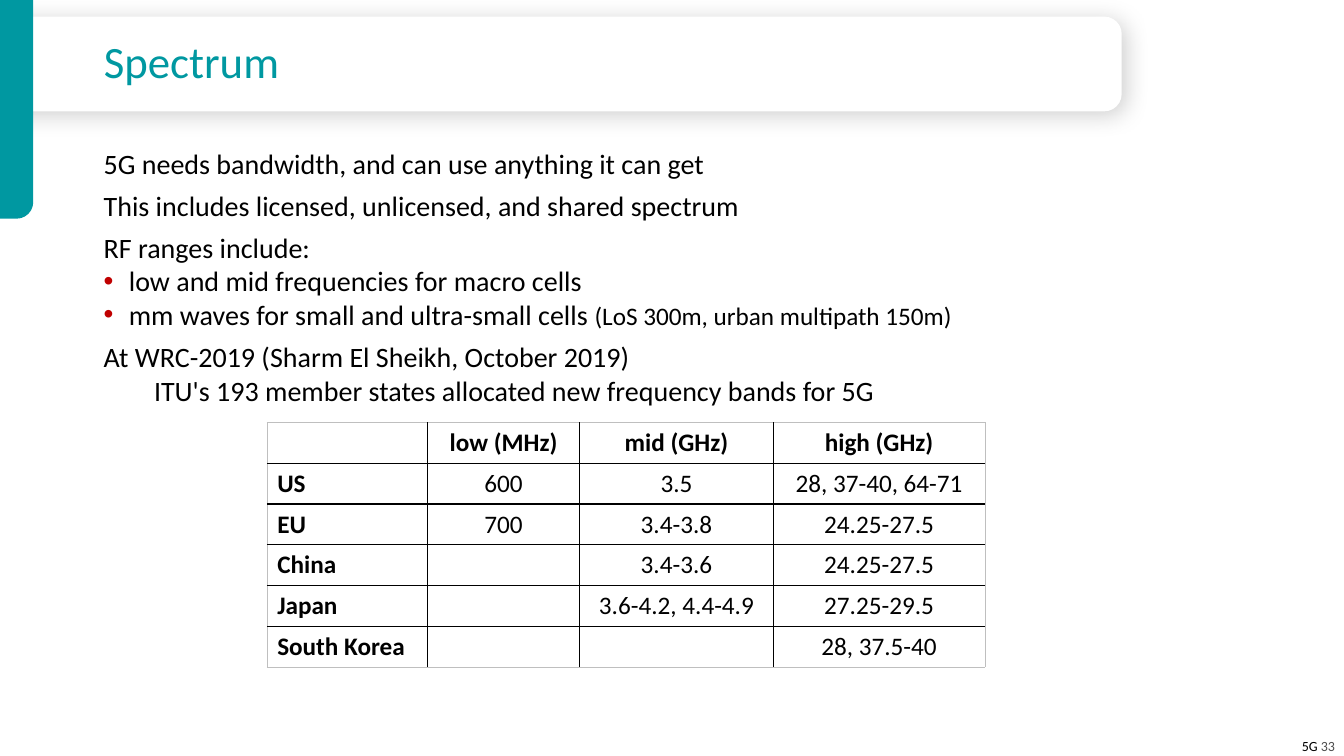
from lxml import etree
from pptx import Presentation
from pptx.dml.color import RGBColor
from pptx.enum.shapes import MSO_SHAPE
from pptx.enum.text import MSO_ANCHOR, PP_ALIGN
from pptx.oxml import parse_xml
from pptx.oxml.ns import nsdecls, qn
from pptx.util import Inches, Pt

COLORS = {
    "white": "FFFFFF", "black": "000000", "teal": "0098A1",
    "red": "C00000", "gray": "4D4D4D", "outline": "BFBFBF",
}


def rgb(name):
    return RGBColor.from_string(COLORS[name])


def set_font(font, size, color="black", bold=False):
    font.name = "Calibri"
    font.size = Pt(size)
    font.bold = bold
    font.color.rgb = rgb(color)


prs = Presentation()
prs.slide_width, prs.slide_height = Inches(13.33), Inches(7.5)
slide = prs.slides.add_slide(prs.slide_layouts[5])
shapes = slide.shapes

# Footer with page number
footer = shapes.add_textbox(Inches(12.78), Inches(7.27), Inches(0.56), Inches(0.27))
footer.text_frame.word_wrap = False
page = footer.text_frame.paragraphs[0]
page.alignment = PP_ALIGN.RIGHT
for text, color in (("5G ", "black"), ("33", "gray")):
    run = page.add_run()
    run.text = text
    set_font(run.font, 10, color)

# Header card, turned so that its rounded end points right
header = shapes.add_shape(MSO_SHAPE.ROUND_2_SAME_RECTANGLE,
                          Inches(5.09), Inches(-4.93), Inches(0.94), Inches(11.13))
header.rotation = 90
header.adjustments[0] = 0.184
header.adjustments[1] = 0

# Side tab, rounded at the bottom right
side_tab = shapes.add_shape(MSO_SHAPE.ROUND_1_RECTANGLE,
                            0, 0, Inches(0.33), Inches(2.17))
side_tab.adjustments[0] = 0.5
side_tab._element.spPr.find(qn("a:xfrm")).set("flipV", "1")

for panel, color in ((header, "white"), (side_tab, "teal")):
    panel.shadow.inherit = False
    panel.fill.solid()
    panel.fill.fore_color.rgb = rgb(color)
    panel.line.fill.background()

header._element.spPr.find(qn("a:effectLst")).append(parse_xml(
    f'<a:outerShdw {nsdecls("a")} blurRad="{Pt(17)}" dist="{Pt(3)}" dir="2700000" '
    f'algn="tl" rotWithShape="0"><a:srgbClr val="{COLORS["black"]}">'
    '<a:alpha val="19000"/></a:srgbClr></a:outerShdw>'))

# Title
title = shapes.title
shapes._spTree.append(title._element)
title.left, title.top = Inches(0.93), Inches(0.29)
title.width, title.height = Inches(9.87), Inches(0.71)
title.text_frame.text = "Spectrum"
title.text_frame.vertical_anchor = MSO_ANCHOR.MIDDLE
heading = title.text_frame.paragraphs[0]
heading.alignment = PP_ALIGN.LEFT
heading.line_spacing = 0.85
set_font(heading.font, 32, "teal")

# Body: kind of paragraph, then its text
points = [
    ("lead", "5G needs bandwidth, and can use anything it can get"),
    ("lead", "This includes licensed, unlicensed, and shared spectrum"),
    ("lead", "RF ranges include:"),
    ("bullet", "low and mid frequencies for macro cells"),
    ("bullet", "mm waves for small and ultra-small cells "),
    ("lead", "At WRC-2019 (Sharm El Sheikh, October 2019)"),
    ("indented", "ITU's 193 member states allocated new frequency bands for 5G"),
]
body = shapes.add_textbox(Inches(0.93), Inches(1.4), Inches(11.96), Inches(5.58)).text_frame
body.word_wrap = True
for i, (kind, text) in enumerate(points):
    point = body.add_paragraph() if i else body.paragraphs[0]
    point.add_run().text = text
    props = point._p.get_or_add_pPr()
    if kind == "lead" and i:
        point.space_before = Pt(6)
    elif kind == "indented":
        props.set("marL", str(Inches(0.5)))
    elif kind == "bullet":
        props.set("marL", str(Inches(0.25)))
        props.set("indent", str(Inches(-0.25)))
        bullet_color = etree.SubElement(props, qn("a:buClr"))
        etree.SubElement(bullet_color, qn("a:srgbClr"), val=COLORS["red"])
        etree.SubElement(props, qn("a:buFont"), typeface="Arial")
        etree.SubElement(props, qn("a:buChar"), char="•")
    set_font(point.font, 20)
ranges = body.paragraphs[4].add_run()
ranges.text = "(LoS 300m, urban multipath 150m)"
ranges.font.size = Pt(18)

# Frequency bands by region
bands = [
    ["", "low (MHz)", "mid (GHz)", "high (GHz)"],
    ["US", "600", "3.5", "28, 37-40, 64-71"],
    ["EU", "700", "3.4-3.8", "24.25-27.5"],
    ["China", "", "3.4-3.6", "24.25-27.5"],
    ["Japan", "", "3.6-4.2, 4.4-4.9", "27.25-29.5"],
    ["South Korea", "", "", "28, 37.5-40"],
]
widths = [1.59, 1.51, 1.92, 2.1]
last_row, last_col = len(bands) - 1, len(widths) - 1
table = shapes.add_table(len(bands), len(widths), Inches(2.65), Inches(4.19),
                         Inches(sum(widths)), Inches(2.43)).table
table.first_row = table.horz_banding = False
for column, width in zip(table.columns, widths):
    column.width = Inches(width)

for r, values in enumerate(bands):
    for c, value in enumerate(values):
        cell = table.cell(r, c)
        cell.text = value
        entry = cell.text_frame.paragraphs[0]
        entry.alignment = PP_ALIGN.CENTER if c else PP_ALIGN.LEFT
        set_font(entry.font, 18, bold=r == 0 or c == 0)
        # Black inner rules, pale outer edge
        outer = {"L": c == 0, "R": c == last_col, "T": r == 0, "B": r == last_row}
        for side, on_edge in outer.items():
            border = etree.SubElement(cell._tc.get_or_add_tcPr(), qn(f"a:ln{side}"),
                                      w=str(Pt(0.5 if on_edge else 1)))
            fill = etree.SubElement(border, qn("a:solidFill"))
            etree.SubElement(fill, qn("a:srgbClr"),
                             val=COLORS["outline" if on_edge else "black"])
        cell.fill.background()

prs.save("out.pptx")
